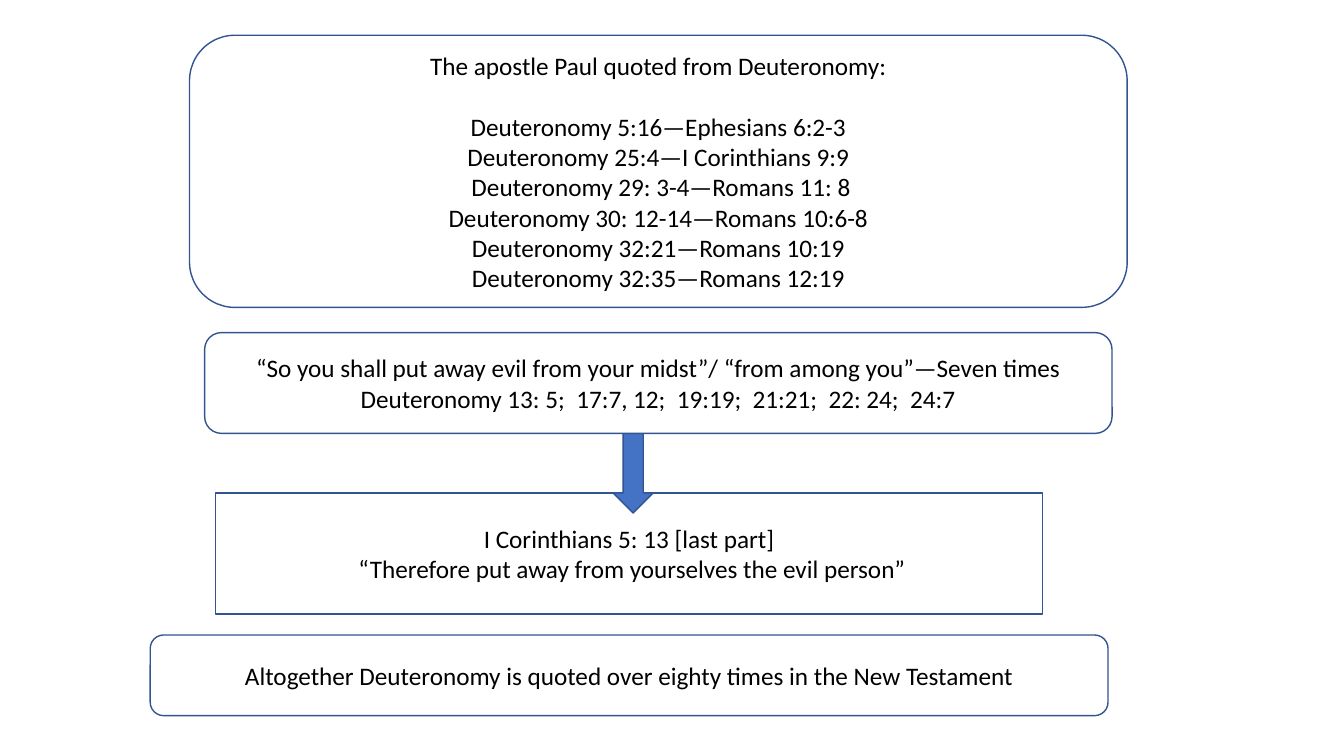
"""Build the slide on Deuteronomy quoted in the New Testament."""
from pptx import Presentation
from pptx.dml.color import RGBColor
from pptx.enum.shapes import MSO_SHAPE
from pptx.enum.text import MSO_ANCHOR, PP_ALIGN
from pptx.util import Inches, Pt

ROUND, RECT = MSO_SHAPE.ROUNDED_RECTANGLE, MSO_SHAPE.RECTANGLE
ARROW = MSO_SHAPE.DOWN_ARROW
MIDDLE, CENTER = MSO_ANCHOR.MIDDLE, PP_ALIGN.CENTER
WHITE = RGBColor(0xFF, 0xFF, 0xFF)
BLACK = RGBColor(0, 0, 0)
BLUE = RGBColor(0x44, 0x72, 0xC4)
EDGE = RGBColor(0x32, 0x54, 0x91)

WIDE, HIGH = 13.33, 7.5
FONT = {"name": "Calibri", "size": Pt(18)}
FRAME = {"word_wrap": True, "vertical_anchor": MIDDLE}
HEAD_GAP = Pt(22)

PAUL = [
    "The apostle Paul quoted from Deuteronomy:",
    "Deuteronomy 5:16—Ephesians 6:2-3",
    "Deuteronomy 25:4—I Corinthians 9:9",
    " Deuteronomy 29: 3-4—Romans 11: 8",
    "Deuteronomy 30: 12-14—Romans 10:6-8",
    "Deuteronomy 32:21—Romans 10:19",
    "Deuteronomy 32:35—Romans 12:19",
]
EVIL = [
    "“So you shall put away evil from your midst”/ “from among you”—Seven times",
    "Deuteronomy 13: 5;  17:7, 12;  19:19;  21:21;  22: 24;  24:7",
]
PERSON = [
    "I Corinthians 5: 13 [last part]",
    " “Therefore put away from yourselves the evil person”",
]
TOTAL = ["Altogether Deuteronomy is quoted over eighty times in the New Testament"]

PARTS = [
    (ROUND, (1.88, 0.35, 9.3, 2.7), WHITE, PAUL),
    (RECT, (2.14, 4.89, 8.2, 1.2), WHITE, PERSON),
    (ARROW, (6.08, 4.29, 0.4, 0.8), BLUE, []),
    (ROUND, (1.49, 6.3, 9.5, 0.8), WHITE, TOTAL),
    (ROUND, (2.03, 3.3, 9, 1), WHITE, EVIL),
]


def put(item, values):
    """Set each named value on the item."""
    for name, value in values.items():
        setattr(item, name, value)


def write(frame, lines):
    """Write centred lines into a text frame."""
    put(frame, FRAME)
    for row, line in enumerate(lines):
        para = frame.add_paragraph() if row else frame.paragraphs[0]
        para.alignment = CENTER
        run = para.add_run()
        run.text = line
        put(run.font, FONT)
        run.font.color.rgb = BLACK
    if lines is PAUL:
        frame.paragraphs[0].space_after = HEAD_GAP


def draw(slide, kind, place, color, lines):
    """Draw one outlined shape with its text."""
    shape = slide.shapes.add_shape(kind, *map(Inches, place))
    shape.shadow.inherit = False
    shape.fill.solid()
    shape.fill.fore_color.rgb = color
    shape.line.color.rgb = EDGE
    shape.line.width = Pt(1)
    if lines:
        write(shape.text_frame, lines)


def main():
    """Build and save the deck."""
    deck = Presentation()
    put(deck, {"slide_width": Inches(WIDE), "slide_height": Inches(HIGH)})
    slide = deck.slides.add_slide(deck.slide_layouts[6])
    for part in PARTS:
        draw(slide, *part)
    deck.save("out.pptx")


if __name__ == "__main__":
    main()
